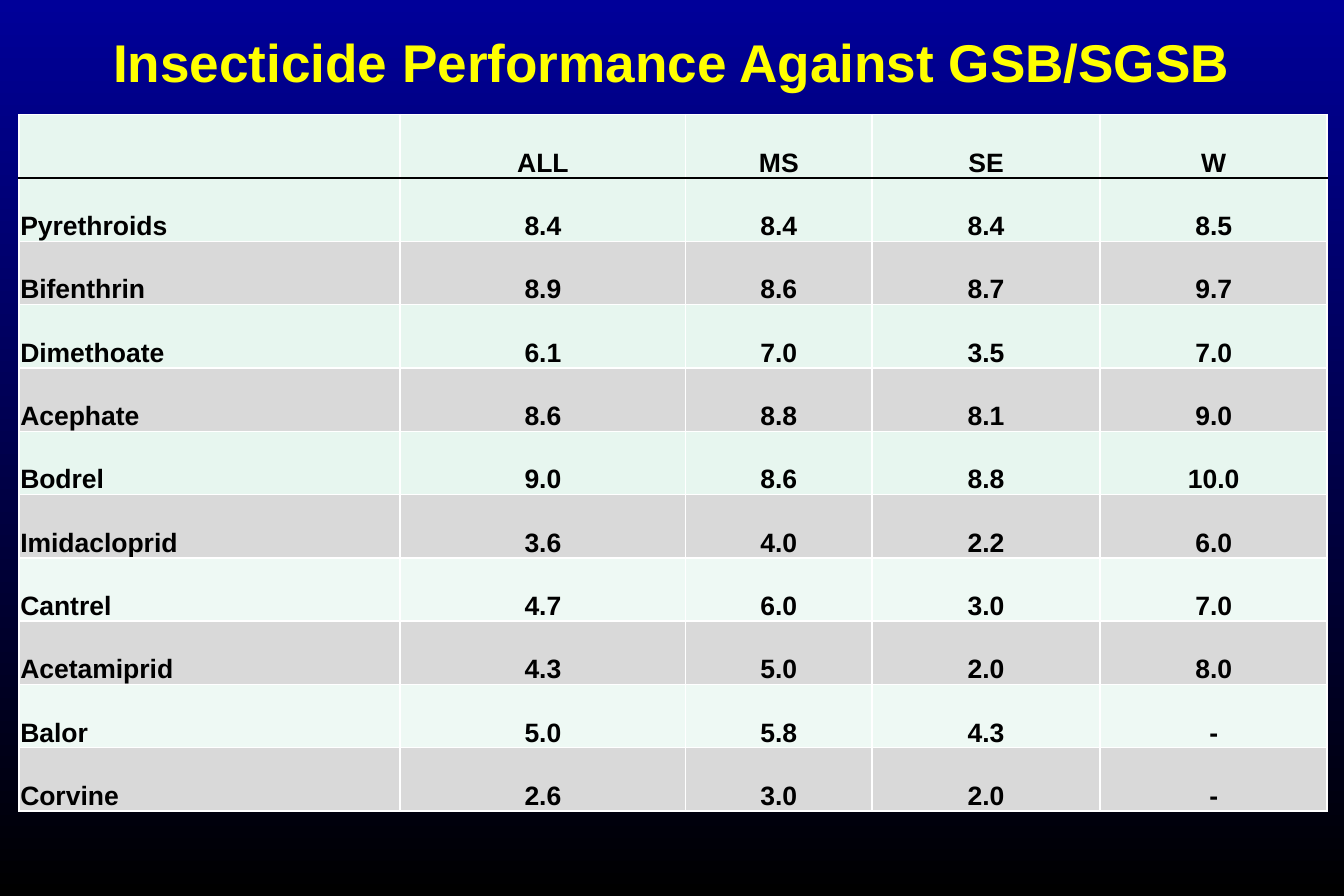
from lxml.etree import SubElement
from pptx import Presentation
from pptx.dml.color import RGBColor
from pptx.enum.text import MSO_ANCHOR, MSO_AUTO_SIZE, PP_ALIGN
from pptx.oxml.ns import qn
from pptx.util import Inches, Pt


def color(target, code):
    target.rgb = RGBColor.from_string(code)


def style(para, size, code, align):
    para.alignment = align
    for run in para.runs:
        run.font.name = "Arial"
        run.font.size = Pt(size)
        run.font.bold = True
        color(run.font.color, code)


deck = Presentation()
deck.slide_width = Inches(11.25)
deck.slide_height = Inches(7.5)
slide = deck.slides.add_slide(deck.slide_layouts[6])

# Background, blue at the top to black
back = slide.background.fill
back.gradient()
back.gradient_angle = 270
for stop, code in zip(back.gradient_stops, ["000099", "000000"]):
    color(stop.color, code)

# Title
title = slide.shapes.add_textbox(0, Inches(0.2), Inches(11.25), Inches(0.64))
frame = title.text_frame
frame.word_wrap = True
frame.auto_size = MSO_AUTO_SIZE.SHAPE_TO_FIT_TEXT
frame.text = "Insecticide Performance Against GSB/SGSB"
style(frame.paragraphs[0], 32, "FFFF00", PP_ALIGN.CENTER)

# Ratings by region
rows = [
    ["", "ALL", "MS", "SE", "W"],
    ["Pyrethroids", "8.4", "8.4", "8.4", "8.5"],
    ["Bifenthrin", "8.9", "8.6", "8.7", "9.7"],
    ["Dimethoate", "6.1", "7.0", "3.5", "7.0"],
    ["Acephate", "8.6", "8.8", "8.1", "9.0"],
    ["Bodrel", "9.0", "8.6", "8.8", "10.0"],
    ["Imidacloprid", "3.6", "4.0", "2.2", "6.0"],
    ["Cantrel", "4.7", "6.0", "3.0", "7.0"],
    ["Acetamiprid", "4.3", "5.0", "2.0", "8.0"],
    ["Balor", "5.0", "5.8", "4.3", "-"],
    ["Corvine", "2.6", "3.0", "2.0", "-"],
]
widths = [3.19, 2.39, 1.56, 1.91, 1.9]
table = slide.shapes.add_table(
    len(rows), len(widths), Inches(0.16), Inches(0.96), Inches(10.94), Inches(5.83)
).table
table.first_row = False
table.horz_banding = False
for col, width in zip(table.columns, widths):
    col.width = Inches(width)

for r, row in enumerate(rows):
    table.rows[r].height = Inches(0.53)
    # Grey on even rows, mint on the rest, paler from row 7 on
    if r and r % 2 == 0:
        shade = "D9D9D9"
    else:
        shade = "E7F6EF" if r < 7 else "EEF9F4"

    for c, text in enumerate(row):
        cell = table.cell(r, c)
        cell.text = text
        cell.vertical_anchor = MSO_ANCHOR.BOTTOM
        cell.margin_left = cell.margin_right = cell.margin_top = Inches(0.01)
        cell.margin_bottom = 0
        style(cell.text_frame.paragraphs[0], 16, "000000",
              PP_ALIGN.CENTER if c else PP_ALIGN.LEFT)

        # White borders, black under the header
        props = cell._tc.get_or_add_tcPr()
        for side in "LRTB":
            dark = (r, side) in [(0, "B"), (1, "T")]
            line = SubElement(props, qn("a:ln" + side), w=str(Pt(1)))
            fill = SubElement(line, qn("a:solidFill"))
            SubElement(fill, qn("a:srgbClr"), val="000000" if dark else "FFFFFF")

        cell.fill.solid()
        color(cell.fill.fore_color, shade)

deck.save("out.pptx")
